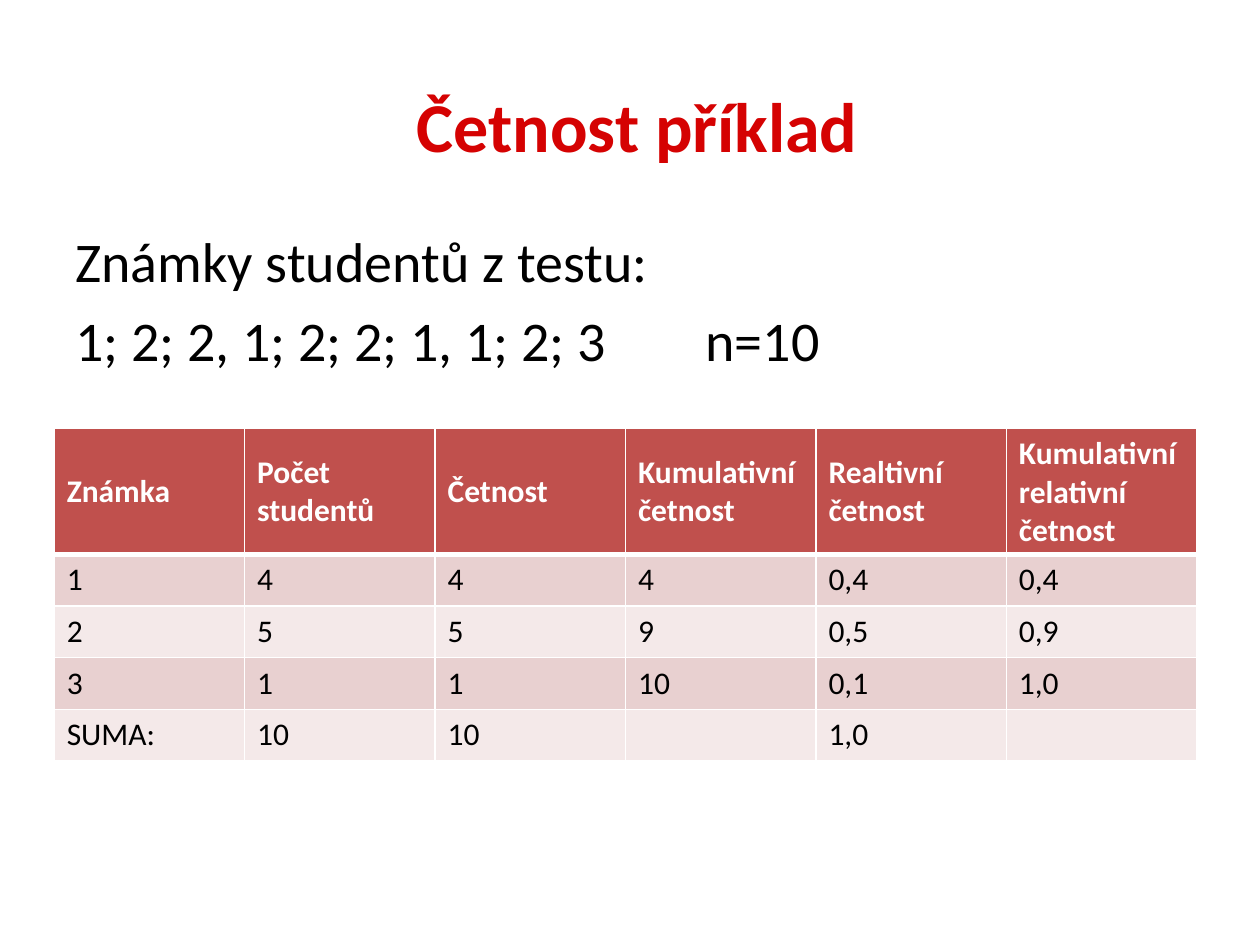
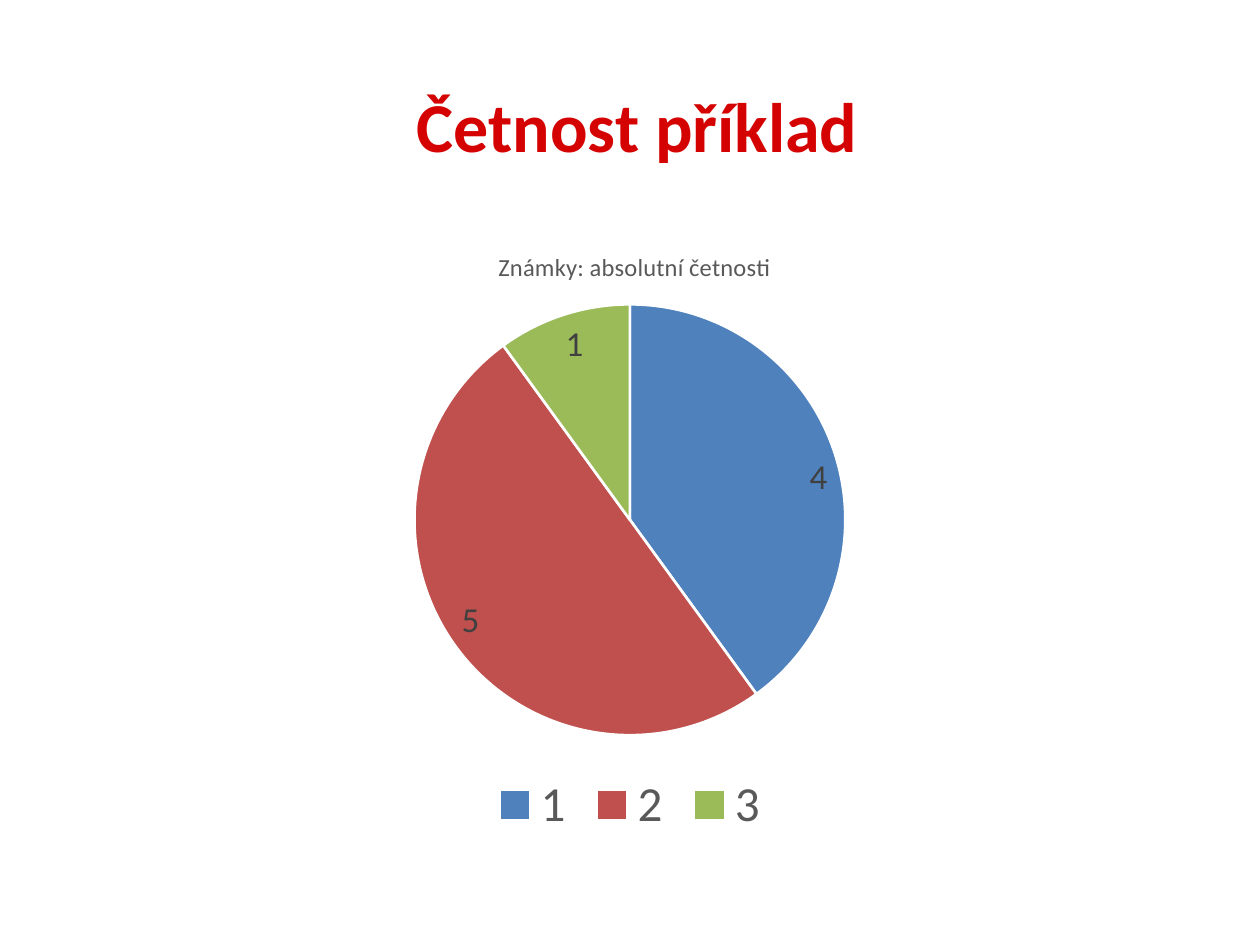
from lxml import etree
from pptx import Presentation, util as u
from pptx.chart import data
from pptx.dml import color
from pptx.enum import chart as ch, text as t
from pptx.oxml import ns, xmlchemy as xc, parse_xml

RED, WHITE, BLACK, GREY = "D50202", "FFFFFF", "000000", "595959"
HEAD, BANDS = "C0504D", ("F4E9E9", "E8D0D0")
PIE = ("4F81BD", "C0504D", "9BBB59")
TITLE = "Četnost příklad "
ROWS = (
    ("Známka", "Počet studentů", "Četnost", "Kumulativní četnost",
     "Realtivní\nčetnost", "Kumulativní relativní četnost"),
    ("1", "4", "4", "4", "0,4", "0,4"),
    ("2", "5", "5", "9", "0,5", "0,9"),
    ("3", "1", "1", "10", "0,1", "1,0"),
    ("SUMA:", "10", "10", "", "1,0", ""),
)


def rgb(code):
    return color.RGBColor.from_string(code)


def put(item, **form):
    for name, value in form.items():
        setattr(item, name, value)


class Deck:
    """Holds the style and the current slide, on a grid of 100 columns by 75 rows."""

    def __init__(self):
        self.prs = Presentation()
        put(self.prs, slide_width=u.Inches(10), slide_height=u.Inches(7.5))
        self.slide = None

    def grid(self, *cells):
        sizes = (self.prs.slide_width / 100, self.prs.slide_height / 75) * 2
        return [round(n * size) for n, size in zip(cells, sizes)]

    def font(self, font, size, code, bold=False):
        put(font, name="Calibri", size=u.Pt(size), bold=bold)
        font.color.rgb = rgb(code)

    def style(self, frame, *look):
        for para in frame.paragraphs:
            for run in para.runs:
                self.font(run.font, *look)

    def page(self, title):
        self.slide = self.prs.slides.add_slide(self.prs.slide_layouts[6])
        frame = self.text((4.3, 3.7, 93.8, 12.3), title, 40, RED, True)
        frame.vertical_anchor = t.MSO_ANCHOR.MIDDLE
        frame.paragraphs[0].alignment = t.PP_ALIGN.CENTER

    def text(self, at, words, *look):
        frame = self.slide.shapes.add_textbox(*self.grid(*at)).text_frame
        put(frame, word_wrap=True, text=words)
        self.style(frame, *look)
        for para in frame.paragraphs[1:]:
            para.space_before = u.Pt(6.4)
        return frame

    def tabs(self, para, *stops):
        stop_list = etree.SubElement(para._p.get_or_add_pPr(), ns.qn("a:tabLst"))
        for stop in stops:
            etree.SubElement(stop_list, ns.qn("a:tab"), pos=str(self.grid(stop)[0]), algn="l")

    def edge(self, cell, side, width):
        cell._tc.get_or_add_tcPr().append(parse_xml(
            f'<a:ln{side} {ns.nsdecls("a")} w="{u.Pt(width)}"><a:solidFill>'
            f'<a:srgbClr val="{WHITE}"/></a:solidFill></a:ln{side}>'))

    def table(self, at, rows, heights):
        shape = self.slide.shapes.add_table(len(rows), len(rows[0]), *self.grid(*at))
        table = shape.table
        table.horz_banding = False
        for r, row in enumerate(rows):
            table.rows[r].height = self.grid(0, heights[min(r, 1)])[1]
            for c, words in enumerate(row):
                self.cell(table.cell(r, c), r, words)

    def cell(self, cell, r, words):
        cell.text = words
        for side in "LRTB":
            self.edge(cell, side, 3 if (r, side) in ((0, "B"), (1, "T")) else 1)
        cell.fill.solid()
        cell.fill.fore_color.rgb = rgb(BANDS[r % 2] if r else HEAD)
        cell.vertical_anchor = t.MSO_ANCHOR.TOP if r else t.MSO_ANCHOR.MIDDLE
        self.style(cell.text_frame, 18, BLACK if r else WHITE, not r)

    def place(self, item, **spots):
        old = item.find(ns.qn("c:layout"))
        if old is None:
            old = etree.Element(ns.qn("c:layout"))
            item.insert(0, old)
        box = etree.SubElement(old, ns.qn("c:manualLayout"))
        if "w" in spots:
            etree.SubElement(box, ns.qn("c:layoutTarget"), val="inner")
        for axis in "xy":
            etree.SubElement(box, ns.qn(f"c:{axis}Mode"), val="edge")
        for name, share in spots.items():
            etree.SubElement(box, ns.qn(f"c:{name}"), val=str(share))

    def pie(self, at, title, names, values):
        info = data.CategoryChartData()
        info.categories = names
        info.add_series("Series 1", values)
        kind = ch.XL_CHART_TYPE.PIE
        chart = self.slide.shapes.add_chart(kind, *self.grid(*at), info).chart
        self.font(chart.font, 10, BLACK)
        put(chart, has_title=True, has_legend=True)
        chart.chart_title.text_frame.text = title
        self.style(chart.chart_title.text_frame, 14, GREY)
        self.place(chart.chart_title._element, x=0.38, y=0.04)
        put(chart.legend, position=ch.XL_LEGEND_POSITION.BOTTOM, include_in_layout=False)
        self.font(chart.legend.font, 28, GREY)
        plot = chart.plots[0]
        put(plot, vary_by_categories=True, has_data_labels=True)
        put(plot.data_labels, show_value=True, show_percentage=False,
            position=ch.XL_LABEL_POSITION.INSIDE_END)
        self.font(plot.data_labels.font, 20, "404040")
        for i, code in enumerate(PIE):
            form = plot.series[0].points[i].format
            form.fill.solid()
            form.fill.fore_color.rgb = rgb(code)
            form.line.color.rgb = rgb(WHITE)
            form.line.width = u.Pt(1.5)
        area = chart._chartSpace.find(".//" + ns.qn("c:plotArea"))
        self.place(area, x=0.31, y=0.13, w=0.38, h=0.7)


def main():
    deck = Deck()
    deck.page(TITLE)
    body = deck.text((5, 17.5, 90, 49.5),
                     "Známky studentů z testu:\n1; 2; 2, 1; 2; 2; 1, 1; 2; 3\t\tn=10", 32, BLACK)
    deck.tabs(body.paragraphs[1], 46, 50)
    deck.table((4.3, 34, 90.7, 26.2), ROWS, (10, 4.1))
    deck.page(TITLE)
    deck.pie((5, 17.5, 90, 49.5), "Známky: absolutní četnosti", ("1", "2", "3"), (4, 5, 1))
    deck.prs.save("out.pptx")


if __name__ == "__main__":
    main()
